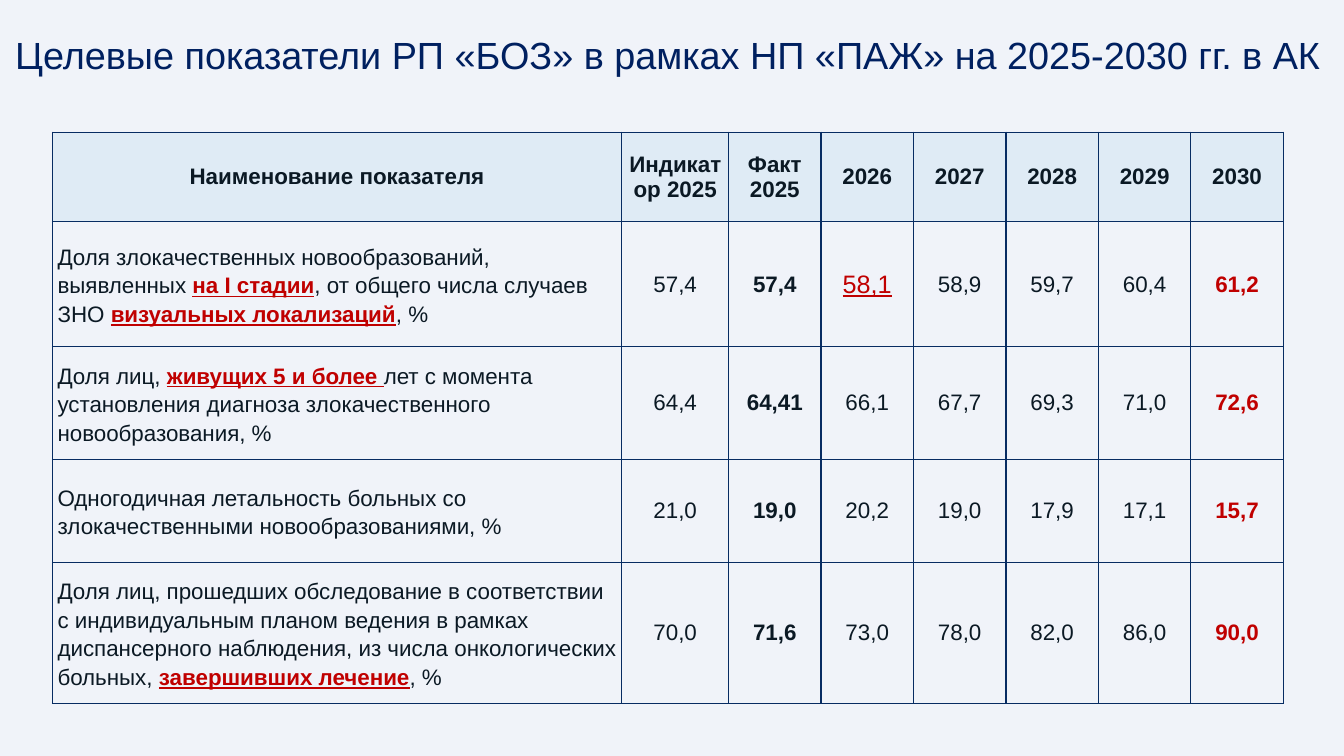
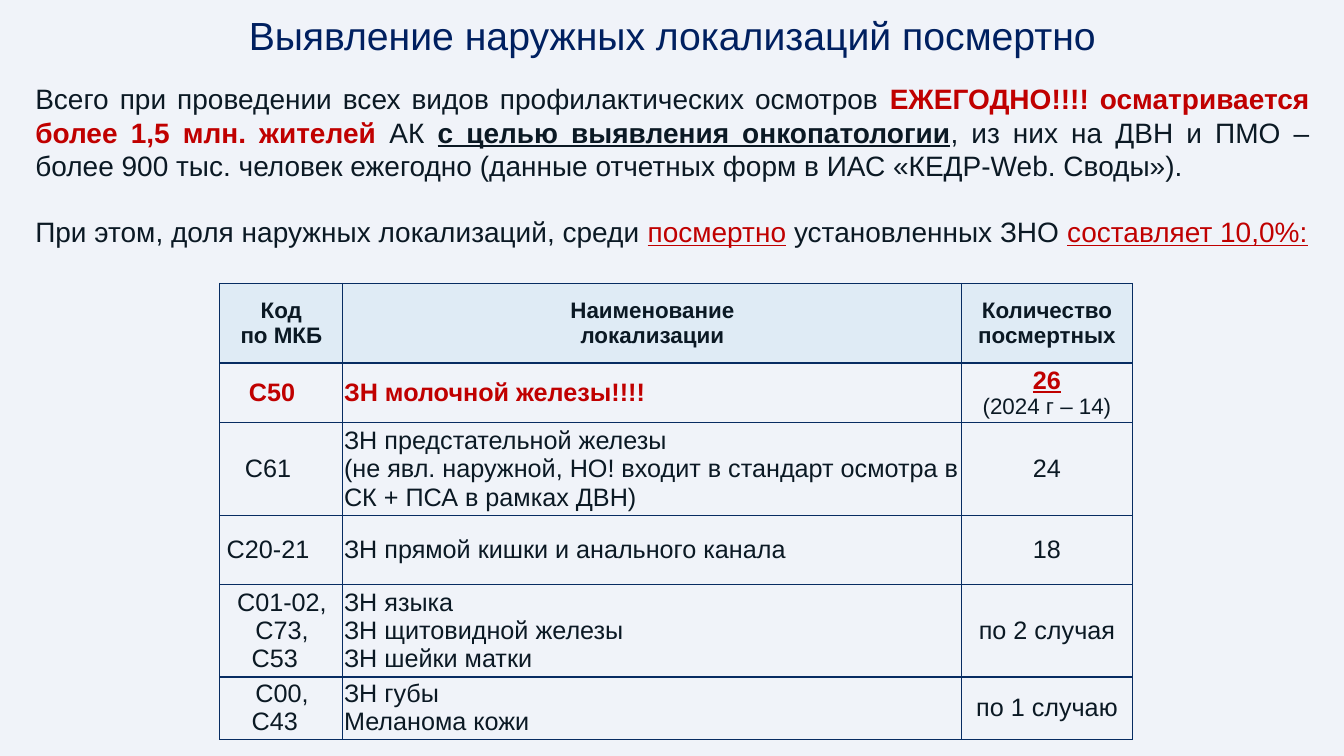
from lxml import etree
from pptx import Presentation
from pptx import util as u
from pptx.dml.color import RGBColor
from pptx.enum import text
from pptx.oxml import ns

COLOURS = {"page": "F0F3F9", "title": "002060", "ink": "0B1924",
           "red": "C00000", "header": "DFEBF5", "border": "072C62"}
PLAIN = {"name": "Arial", "bold": False, "underline": False, "colour": "ink"}
BOLD = {"bold": True}
RED = {"colour": "red"}
RED_BOLD = RED | BOLD
RED_LINE = RED | {"underline": True}
RED_KEY = RED_BOLD | RED_LINE
LEFT, CENTRE, JUSTIFY = (text.PP_ALIGN.LEFT, text.PP_ALIGN.CENTER,
                         text.PP_ALIGN.JUSTIFY)
MIDDLE = text.MSO_ANCHOR.MIDDLE


def write(frame, paras, align, base):
    """Fill a frame; each paragraph is a list of (words, style) spans."""
    frame.word_wrap = True
    for number, spans in enumerate(paras):
        para = frame.add_paragraph() if number else frame.paragraphs[0]
        para.alignment = align
        for words, style in spans:
            span = para.add_run()
            span.text = words
            look = PLAIN | base | style
            span.font.color.rgb = RGBColor.from_string(COLOURS[look.pop("colour")])
            for key, value in look.items():
                setattr(span.font, key, value)


def add_grid(page, left, top, widths, heights, rows, margins, size, name_column):
    """Add a bordered table; each cell is a list of paragraphs."""
    table = page.shapes.add_table(
        len(heights), len(widths), u.Cm(left), u.Cm(top),
        u.Cm(sum(widths)), u.Cm(sum(heights))).table
    table.horz_banding = False
    for column, width in zip(table.columns, widths):
        column.width = u.Cm(width)
    for row, height in zip(table.rows, heights):
        row.height = u.Cm(height)
    for r, row in enumerate(rows):
        for c, paras in enumerate(row):
            cell = table.cell(r, c)
            cell.vertical_anchor = MIDDLE
            cell.margin_left = cell.margin_right = u.Cm(margins[c])
            cell.margin_top = cell.margin_bottom = 0
            cell.fill.solid()
            cell.fill.fore_color.rgb = RGBColor.from_string(
                COLOURS["page" if r else "header"])
            write(cell.text_frame, paras,
                  LEFT if r and c == name_column else CENTRE,
                  {"size": u.Pt(size if r else 16), "bold": r == 0})
            props = cell._tc.get_or_add_tcPr()
            for place, side in enumerate(("lnL", "lnR", "lnT", "lnB")):
                line = etree.Element(ns.qn(f"a:{side}"), w=str(u.Pt(1)))
                fill = etree.SubElement(line, ns.qn("a:solidFill"))
                etree.SubElement(fill, ns.qn("a:srgbClr"), val=COLOURS["border"])
                props.insert(place, line)
    return table


deck = Presentation()
deck.slide_width, deck.slide_height = u.Cm(33.87), u.Cm(19.05)
backdrop = deck.slide_master.background.fill
backdrop.solid()
backdrop.fore_color.rgb = RGBColor.from_string(COLOURS["page"])

pages = []
for words, left, top, width, size in (
        ("Целевые показатели РП «БОЗ» в рамках НП «ПАЖ» на 2025-2030 гг. в АК",
         0.13, 0.74, 33.4, 27),
        ("Выявление наружных локализаций посмертно", 4.24, 0.23, 25.4, 28)):
    page = deck.slides.add_slide(deck.slide_layouts[6])
    pages.append(page)
    title = page.shapes.add_textbox(u.Cm(left), u.Cm(top), u.Cm(width), u.Cm(1.4))
    title.text_frame.margin_top = u.Cm(0.2)
    write(title.text_frame, [[(words, {})]], CENTRE,
          {"size": u.Pt(size), "colour": "title"})
    title.text_frame.paragraphs[0].line_spacing = 0.9
targets_page, cases_page = pages

# Target indicators
headings = ["Наименование показателя", "Индикатор 2025", "Факт 2025",
            "2026", "2027", "2028", "2029", "2030"]
targets = [
    ([("Доля злокачественных новообразований, выявленных ", {}),
      ("на I стадии", RED_KEY), (", от общего числа случаев ЗНО ", {}),
      ("визуальных локализаций", RED_KEY), (", %", {})],
     "57,4 57,4 58,1 58,9 59,7 60,4 61,2"),
    ([("Доля лиц, ", {}), ("живущих 5 и более ", RED_KEY),
      ("лет с момента установления диагноза злокачественного новообразования, %", {})],
     "64,4 64,41 66,1 67,7 69,3 71,0 72,6"),
    ([("Одногодичная летальность больных со злокачественными "
       "новообразованиями, %", {})],
     "21,0 19,0 20,2 19,0 17,9 17,1 15,7"),
    ([("Доля лиц, прошедших обследование в соответствии с индивидуальным планом "
       "ведения в рамках диспансерного наблюдения, из числа онкологических больных, ", {}),
      ("завершивших лечение", RED_KEY), (", %", {})],
     "70,0 71,6 73,0 78,0 82,0 86,0 90,0"),
]
value_styles = [{}, BOLD, {}, {}, {}, {}, RED_BOLD]
rows = [[[[(heading, {})]] for heading in headings]]
for name, values in targets:
    rows.append([[name]] + [[[(value, style)]] for value, style
                            in zip(values.split(), value_styles)])
rows[1][3] = [[("58,1", RED_LINE | {"size": u.Pt(18)})]]
table = add_grid(targets_page, 1.32, 3.33, [14.35, 2.69] + [2.33] * 6,
                 [2.26, 3.15, 2.84, 2.59, 3.56], rows, [0.13] + [0.18] * 7, 16,
                 name_column=0)
for r in range(1, len(rows)):
    table.cell(r, 0).text_frame.paragraphs[0].line_spacing = 1.15

# Cases found after death
summary = cases_page.shapes.add_textbox(u.Cm(0.64), u.Cm(1.93), u.Cm(32.61), u.Cm(4.52))
write(summary.text_frame, [
    [("Всего при проведении всех видов профилактических осмотров ", {}),
     ("ЕЖЕГОДНО!!!! осматривается более 1,5 млн. жителей ", RED_BOLD),
     ("АК ", {}),
     ("с целью выявления онкопатологии", BOLD | {"underline": True}),
     (", из них на ДВН и ПМО – более 900 тыс. человек ежегодно (данные отчетных "
      "форм в ИАС «КЕДР-Web. Своды»).", {})],
    [("При этом, доля наружных локализаций, среди ", {}), ("посмертно", RED_LINE),
     (" установленных ЗНО ", {}), ("составляет 10,0%:", RED_LINE)],
], JUSTIFY, {"size": u.Pt(20)})
summary.text_frame.paragraphs[1].space_before = u.Pt(23)

cases = [
    (["Код", "по МКБ"], ["Наименование", "локализации"], ["Количество посмертных"]),
    (["C50"], ["ЗН молочной железы!!!!"], []),
    (["C61"], ["ЗН предстательной железы",
               "(не явл. наружной, НО! входит в стандарт осмотра в СК + ПСА в рамках ДВН)"],
     ["24"]),
    (["C20-21"], ["ЗН прямой кишки и анального канала"], ["18"]),
    (["C01-02,", "С73,", "С53"],
     ["ЗН языка", "ЗН щитовидной железы", "ЗН шейки матки"], ["по 2 случая"]),
    (["C00,", "С43"], ["ЗН губы", "Меланома кожи"], ["по 1 случаю"]),
]
rows = [[[[(line, RED_BOLD if r == 1 else {})] for line in lines] for lines in row]
        for r, row in enumerate(cases)]
rows[1][2] = [[("26", RED_KEY)], [("(2024 г – 14)", {"size": u.Pt(16)})]]
table = add_grid(cases_page, 5.54, 7.14, [3.1, 15.6, 4.29],
                 [2.01, 1.5, 2.34, 1.73, 2.34, 1.57], rows, [0.03] * 3, 18,
                 name_column=1)
# The codes sit left of centre, except those followed by another line
for r, shift in enumerate((0.5, 0.7, 0.7, 0.36, 0.36), 1):
    code = table.cell(r, 0)
    code.margin_right = u.Cm(shift)
    for para in code.text_frame.paragraphs[:-1]:
        para._p.get_or_add_pPr().set("marL", str(u.Cm(shift)))

deck.save("out.pptx")
